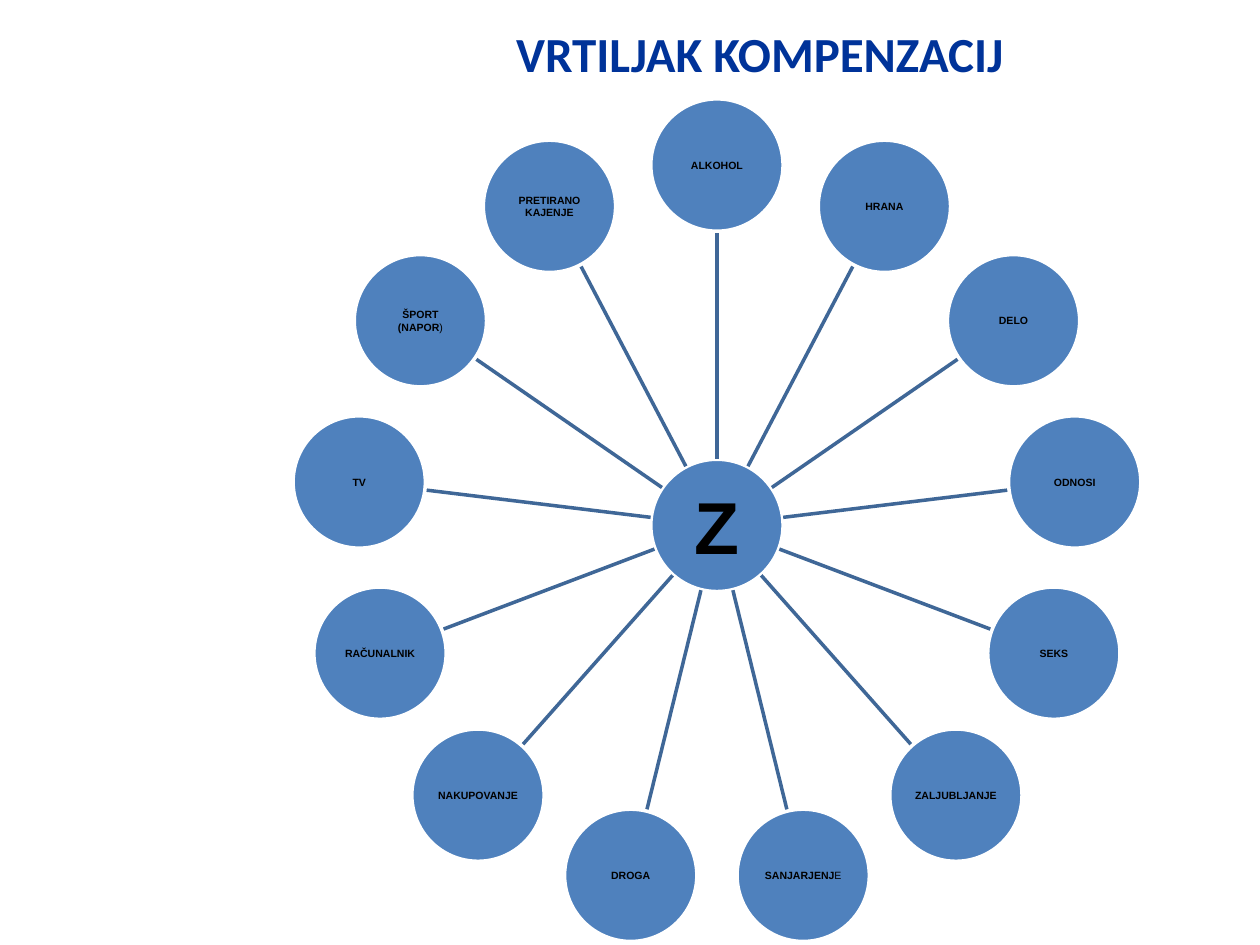
"""Draw a wheel of compensations: a hub with labelled circles spaced evenly around it."""
from dataclasses import dataclass
from math import cos, pi, sin

from lxml.etree import SubElement
from pptx import Presentation
from pptx.dml.color import RGBColor
from pptx.enum.shapes import MSO_CONNECTOR as Connector, MSO_SHAPE as Shape
from pptx.enum.text import MSO_ANCHOR as Anchor, PP_ALIGN as Align
from pptx.oxml.ns import qn
from pptx.util import Inches, Pt


@dataclass(frozen=True)
class Theme:
    title: str = "003399"
    disc: str = "4F81BD"
    rim: str = "FFFFFF"
    spoke: str = "3F6797"
    ink: str = "000000"
    title_font: str = "Calibri"
    font: str = "Arial"
    title_size: int = 28
    hub_size: int = 42
    label_size: int = 6
    line_width: int = 2


@dataclass(frozen=True)
class Wheel:
    x: float
    y: float
    radius: float
    disc: float
    spoke_start: float
    spoke_end: float

    def point(self, angle: float, distance: float) -> tuple[float, float]:
        return self.x + distance * sin(angle), self.y - distance * cos(angle)


@dataclass(frozen=True)
class Label:
    text: str
    plain_tail: str = ""


WIDTH, HEIGHT = 10, 7.5
THEME = Theme()
WHEEL = Wheel(x=0.569 * WIDTH, y=0.556 * HEIGHT, radius=2.86, disc=1.05,
              spoke_start=0.53, spoke_end=2.33)
LABELS = [
    Label("ALKOHOL"), Label("HRANA"), Label("DELO"), Label("ODNOSI"),
    Label("SEKS"), Label("ZALJUBLJANJE"), Label("SANJARJENJ", "E"),
    Label("DROGA"), Label("NAKUPOVANJE"), Label("RAČUNALNIK"), Label("TV"),
    Label("ŠPORT\n(NAPOR", ")"), Label("PRETIRANO\nKAJENJE"),
]


def write(box, text: str, *, size: float, font: str, color: str,
          plain_tail: str = "", inset: float = 0) -> None:
    frame = box.text_frame
    frame.word_wrap = True
    frame.vertical_anchor = Anchor.MIDDLE
    frame.margin_left = frame.margin_right = Inches(inset)
    frame.margin_top = frame.margin_bottom = Inches(inset)
    lines = [[(line, True)] for line in text.split("\n")]
    if plain_tail:
        lines[-1].append((plain_tail, False))
    for index, spans in enumerate(lines):
        para = frame.add_paragraph() if index else frame.paragraphs[0]
        para.alignment = Align.CENTER
        for words, bold in spans:
            span = para.add_run()
            span.text = words
            span.font.size = Pt(size)
            span.font.name = font
            span.font.bold = bold
            span.font.color.rgb = RGBColor.from_string(color)


def draw_title(page, text: str) -> None:
    box = page.shapes.add_textbox(Inches(0.28 * WIDTH), 0,
                                  Inches(0.646 * WIDTH), Inches(0.112 * HEIGHT))
    write(box, text, size=THEME.title_size, font=THEME.title_font,
          color=THEME.title, inset=0.05)


def draw_disc(page, center: tuple[float, float], label: Label,
              size: float, inset: float = 0) -> None:
    left, top = (Inches(value - WHEEL.disc / 2) for value in center)
    side = Inches(WHEEL.disc)
    disc = page.shapes.add_shape(Shape.OVAL, left, top, side, side)
    disc.shadow.inherit = False
    disc.fill.solid()
    disc.fill.fore_color.rgb = RGBColor.from_string(THEME.disc)
    disc.line.color.rgb = RGBColor.from_string(THEME.rim)
    disc.line.width = Pt(THEME.line_width)
    write(disc, label.text, plain_tail=label.plain_tail, size=size,
          font=THEME.font, color=THEME.ink, inset=inset)


def draw_spoke(page, angle: float) -> None:
    start = WHEEL.point(angle, WHEEL.spoke_start)
    end = WHEEL.point(angle, WHEEL.spoke_end)
    spoke = page.shapes.add_connector(
        Connector.STRAIGHT, *(Inches(value) for value in start + end))
    spoke.line.color.rgb = RGBColor.from_string(THEME.spoke)
    spoke.line.width = Pt(THEME.line_width)
    SubElement(spoke._element.spPr, qn("a:effectLst"))


def main() -> None:
    deck = Presentation()
    deck.slide_width, deck.slide_height = Inches(WIDTH), Inches(HEIGHT)
    page = deck.slides.add_slide(deck.slide_layouts[6])
    draw_title(page, "VRTILJAK KOMPENZACIJ")
    draw_disc(page, (WHEEL.x, WHEEL.y), Label("Z"), THEME.hub_size, inset=0.03)
    for index, label in enumerate(LABELS):
        angle = 2 * pi * index / len(LABELS)
        draw_spoke(page, angle)
        draw_disc(page, WHEEL.point(angle, WHEEL.radius), label, THEME.label_size)
    deck.save("out.pptx")


if __name__ == "__main__":
    main()
